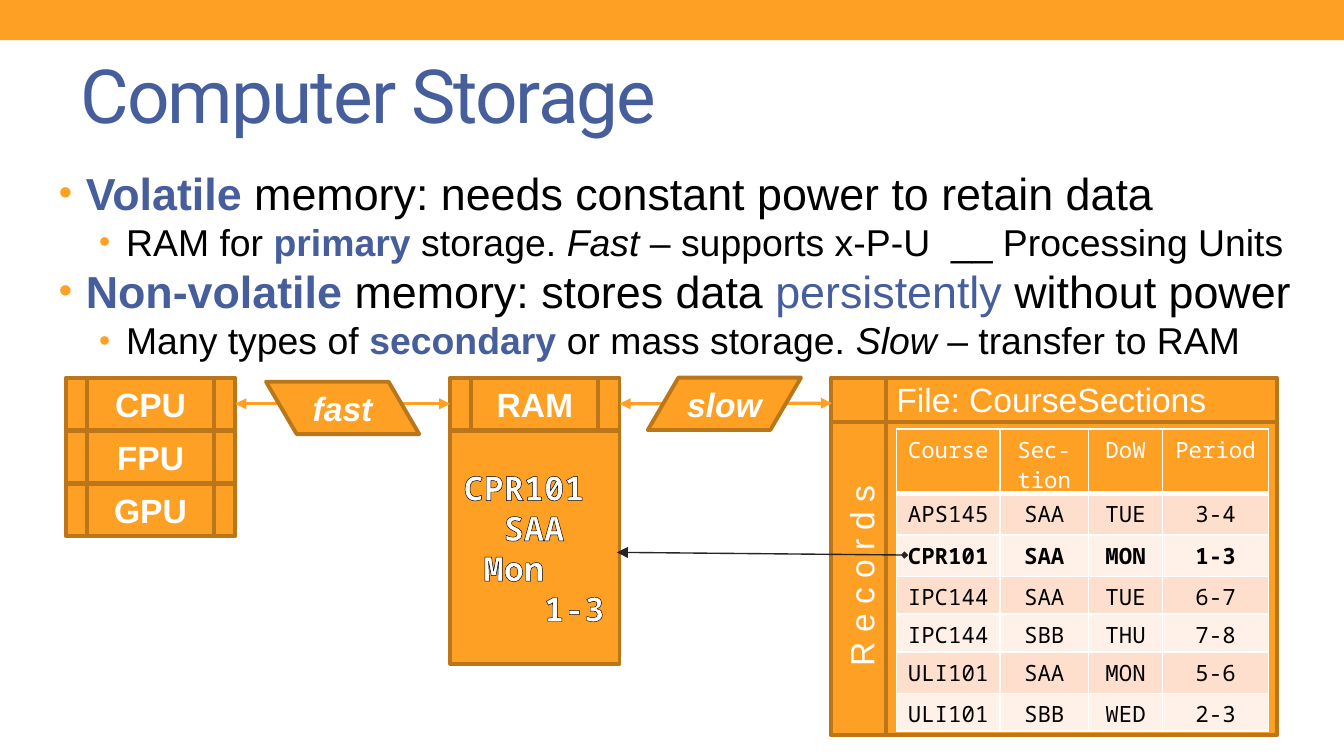
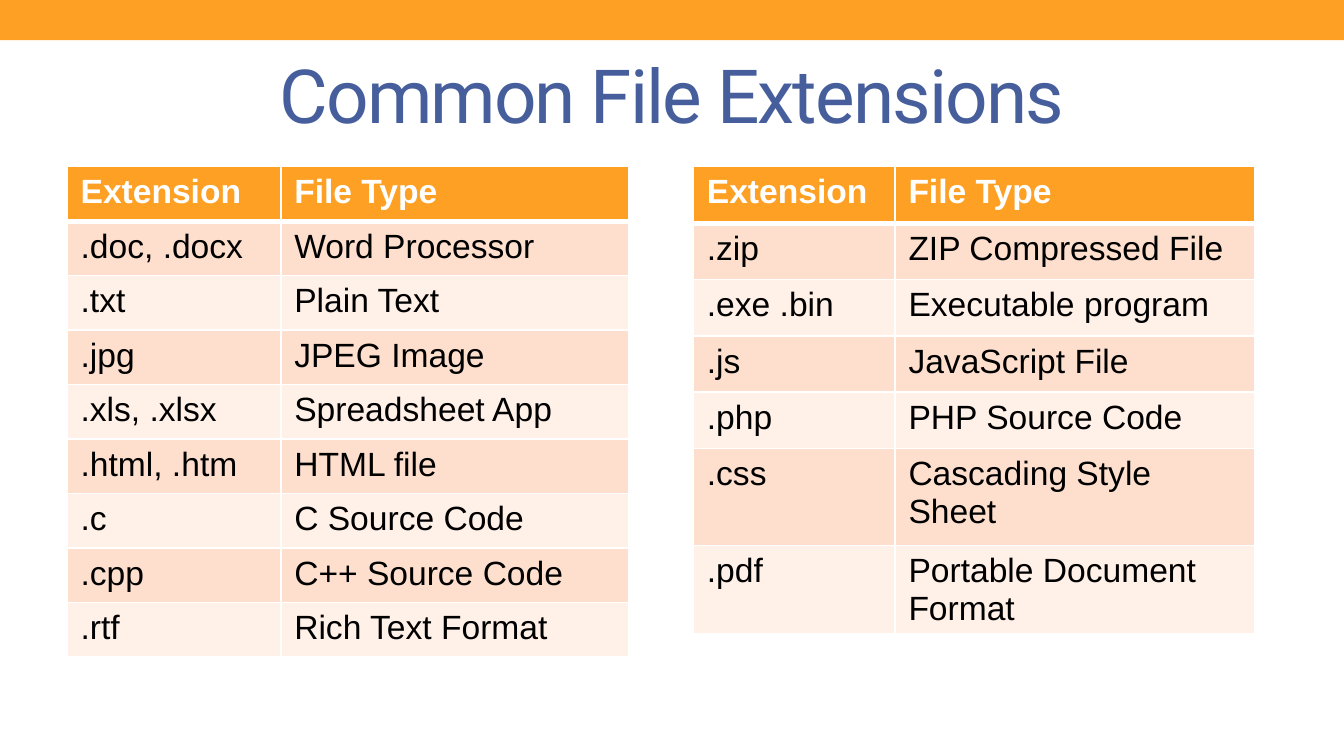
from lxml import etree
from pptx import Presentation
from pptx.dml.color import RGBColor
from pptx.enum.shapes import MSO_CONNECTOR, MSO_SHAPE
from pptx.enum.text import MSO_ANCHOR, MSO_AUTO_SIZE, PP_ALIGN
from pptx.oxml.ns import qn
from pptx.util import Inches, Pt

LEFT, CENTER = PP_ALIGN.LEFT, PP_ALIGN.CENTER
MIDDLE = MSO_ANCHOR.MIDDLE
RECT = MSO_SHAPE.RECTANGLE
UNIT = MSO_SHAPE.FLOWCHART_PREDEFINED_PROCESS
STORE = MSO_SHAPE.FLOWCHART_INTERNAL_STORAGE
SLANT = MSO_SHAPE.FLOWCHART_DATA
STRAIGHT = MSO_CONNECTOR.STRAIGHT

HEX = {
    "orange": "FDA023", "brown": "BB761A", "blue": "465E9C",
    "white": "FFFFFF", "black": "000000", "dark": "262626",
    "peach": "FEDFCD", "cream": "FFF0E8",
}
SANS, MONO, HEAD = "Arial", "Noto Sans Mono", "Roboto"

POINTS = [
    (0, [("Volatile", "key"),
         (" memory: needs constant power to retain data", "")]),
    (1, [("RAM for ", ""), ("primary", "key"), (" storage. ", ""),
         ("Fast", "slant"), (" – supports x-P-U  __ Processing Units", "")]),
    (0, [("Non-volatile", "key"), (" memory: stores data ", ""),
         ("persistently ", "tint"), ("without power", "")]),
    (1, [("Many types of ", ""), ("secondary", "key"),
         (" or mass storage. ", ""), ("Slow", "slant"),
         (" – transfer to RAM", "")]),
]
COURSES = [
    ("Course", "Sec-tion", "DoW", "Period"),
    ("APS145", "SAA", "TUE", "3-4"),
    ("CPR101", "SAA", "MON", "1-3"),
    ("IPC144", "SAA", "TUE", "6-7"),
    ("IPC144", "SBB", "THU", "7-8"),
    ("ULI101", "SAA", "MON", "5-6"),
    ("ULI101", "SBB", "WED", "2-3"),
]
TYPES = ("Extension", "File Type")
DOCS = [
    TYPES,
    (".doc, .docx", "Word Processor"),
    (".txt", "Plain Text"),
    (".jpg", "JPEG Image"),
    (".xls, .xlsx", "Spreadsheet App"),
    (".html, .htm", "HTML file"),
    (".c", "C Source Code"),
    (".cpp", "C++ Source Code"),
    (".rtf", "Rich Text Format"),
]
CODES = [
    TYPES,
    (".zip", "ZIP Compressed File"),
    (".exe .bin", "Executable program"),
    (".js", "JavaScript File"),
    (".php", "PHP Source Code"),
    (".css", "Cascading Style Sheet"),
    (".pdf", "Portable Document Format"),
]


def rgb(name):
    return RGBColor.from_string(HEX[name])


def paint(host, name):
    node = etree.SubElement(etree.SubElement(host, qn("a:solidFill")),
                            qn("a:srgbClr"))
    node.set("val", HEX[name])


def style(run, size, color, face=SANS, bold=False, slant=False):
    font = run.font
    font.size, font.name = Pt(size), face
    font.bold, font.italic = bold, slant
    font.color.rgb = rgb(color)


def style_all(frame, align, *look, **more):
    for para in frame.paragraphs:
        para.alignment = align
        for run in para.runs:
            style(run, *look, **more)


def inset(frame, side, edge):
    frame.margin_left = frame.margin_right = Inches(side)
    frame.margin_top = frame.margin_bottom = Inches(edge)


def add_block(slide, kind, box, text="", side=0.1, slant=False):
    shape = slide.shapes.add_shape(kind, *map(Inches, box))
    shape.shadow.inherit = False
    shape.fill.solid()
    shape.fill.fore_color.rgb = rgb("orange")
    shape.line.color.rgb = rgb("brown")
    shape.line.width = Pt(2.08)
    if text:
        frame = shape.text_frame
        frame.text = text
        frame.vertical_anchor = MIDDLE
        inset(frame, side, 0.05)
        style_all(frame, CENTER, 18, "white", bold=True, slant=slant)
    return shape


def add_label(slide, box, text, align=LEFT, turn=None):
    frame = slide.shapes.add_textbox(*map(Inches, box)).text_frame
    frame.word_wrap = True
    frame.text = text
    frame.vertical_anchor = MIDDLE
    inset(frame, 0, 0)
    style_all(frame, align, 18, "white")
    if turn:
        frame._txBody.find(qn("a:bodyPr")).set("vert", turn)


def add_arrow(slide, start, end, color, width, head, size="med"):
    link = slide.shapes.add_connector(STRAIGHT, *map(Inches, start + end))
    link.line.color.rgb = rgb(color)
    link.line.width = Pt(width)
    props = link.element.spPr
    line = props.find(qn("a:ln"))
    etree.SubElement(line, qn("a:headEnd"), type=head, w=size, len=size)
    etree.SubElement(line, qn("a:tailEnd"), type="triangle")
    etree.SubElement(props, qn("a:effectLst"))
    return link


def add_points(slide, box):
    frame = slide.shapes.add_textbox(*map(Inches, box)).text_frame
    frame.word_wrap = True
    frame.margin_top = Inches(0.07)
    for i, (level, parts) in enumerate(POINTS):
        para = frame.add_paragraph() if i else frame.paragraphs[0]
        para.level = level
        props = para._p.get_or_add_pPr()
        props.set("marL", str(Inches(0.2 + 0.3 * level)))
        props.set("indent", str(Inches(-0.2)))
        tint = etree.SubElement(props, qn("a:buClr"))
        etree.SubElement(tint, qn("a:srgbClr")).set("val", HEX["orange"])
        etree.SubElement(props, qn("a:buSzPct")).set("val", "85000")
        etree.SubElement(props, qn("a:buFont")).set("typeface", SANS)
        etree.SubElement(props, qn("a:buChar")).set("char", "•")
        for text, look in parts:
            run = para.add_run()
            run.text = text
            color = "blue" if look in ("key", "tint") else "black"
            style(run, 24 - 4 * level, color,
                  bold=look == "key", slant=look == "slant")


def add_edges(cell, row):
    props = cell._tc.get_or_add_tcPr()
    for side in "LRTB":
        thick = (row, side) in ((0, "B"), (1, "T"))
        line = etree.SubElement(props, qn("a:ln" + side))
        line.set("w", str(Pt(3 if thick else 1)))
        paint(line, "white")


def add_grid(slide, box, cols, rows, data, size=18, face=SANS,
             align=LEFT, pad=None, strong=()):
    holder = slide.shapes.add_table(len(rows), len(cols), *map(Inches, box))
    grid = holder.table
    grid.first_row = grid.horz_banding = False
    for col, width in zip(grid.columns, cols):
        col.width = Inches(width)
    for r, (height, texts) in enumerate(zip(rows, data)):
        grid.rows[r].height = Inches(height)
        fill = ("cream", "peach")[r % 2] if r else "orange"
        for c, text in enumerate(texts):
            cell = grid.cell(r, c)
            add_edges(cell, r)
            cell.fill.solid()
            cell.fill.fore_color.rgb = rgb(fill)
            cell.text = text
            if pad:
                inset(cell, pad, pad)
            style_all(cell.text_frame, align, size,
                      "black" if r else "white", face, bold=r in strong)
    holder.width, holder.height = map(Inches, box[2:])


def add_record(shape):
    frame = shape.text_frame
    frame.text = "CPR101\nSAA\nMon\n1-3"
    frame.vertical_anchor = MIDDLE
    style_all(frame, LEFT, 18, "white", MONO, bold=True)
    for para, step in zip(frame.paragraphs, (0, 2, 1, 4)):
        props = para._p.get_or_add_pPr()
        props.set("marL", str(Inches(0.15 * step)))
        props.set("indent", "0")
        line = etree.Element(qn("a:ln"), w=str(Pt(0.75)))
        paint(line, "black")
        para.runs[0].font._element.insert(0, line)


def add_page(prs, title, align):
    slide = prs.slides.add_slide(prs.slide_layouts[5])
    head = slide.shapes.title
    head.left, head.top, head.width, head.height = map(
        Inches, (0.5, 0.29, 9, 0.81))
    frame = head.text_frame
    frame.text = title
    frame.auto_size = MSO_AUTO_SIZE.NONE
    frame.vertical_anchor = MIDDLE
    style_all(frame, align, 40, "blue", HEAD)
    frame.paragraphs[0].runs[0].font._element.set("spc", "-100")
    return slide


def add_band(prs, slide):
    band = add_block(slide, RECT, (0, 0, 10, 0.3))
    band.line.fill.background()
    prs.slide_master.shapes.element.insert(2, band.element)


def fill_storage(slide):
    add_points(slide, (0.34, 1.16, 9.46, 4.31))
    cpu, _, _ = [
        add_block(slide, UNIT, (0.49, 2.81 + 0.395 * i, 1.26, 0.39), name)
        for i, name in enumerate(("CPU", "FPU", "GPU"))]
    add_record(add_block(slide, RECT, (3.35, 3.21, 1.26, 1.73)))
    add_block(slide, STORE, (6.18, 2.81, 3.32, 2.66))
    ram = add_block(slide, UNIT, (3.35, 2.81, 1.26, 0.39), "RAM")

    fast = add_arrow(slide, (1.75, 3), (3.35, 3), "orange", 1.75, "triangle")
    fast.begin_connect(cpu, 3)
    fast.end_connect(ram, 1)
    slow = add_arrow(slide, (4.61, 3), (6.19, 3), "orange", 1.75, "triangle")
    slow.begin_connect(ram, 3)
    add_block(slide, SLANT, (4.82, 2.81, 1.14, 0.39), "slow", 0.04, True)
    flip = add_block(slide, SLANT, (1.98, 2.84, 1.14, 0.39), "fast",
                     0.08, True)
    flip.element.spPr.find(qn("a:xfrm")).set("flipH", "1")

    add_label(slide, (6.67, 2.81, 2.36, 0.32), "File: CourseSections")
    add_label(slide, (6.25, 3.21, 0.31, 2.22), " R e c o r d s",
              CENTER, "vert270")
    add_grid(slide, (6.67, 3.19, 2.76, 2.24), (0.77, 0.66, 0.55, 0.79),
             (0.41, 0.31, 0.31, 0.24, 0.24, 0.31, 0.28), COURSES,
             12, MONO, CENTER, 0.04, strong=(2,))
    add_arrow(slide, (6.73, 4.13), (4.59, 4.11), "dark", 0.75,
              "diamond", "sm")


def main():
    prs = Presentation()
    prs.slide_width, prs.slide_height = Inches(10), Inches(10 * 9 / 16)
    first = add_page(prs, "Computer Storage", LEFT)
    add_band(prs, first)
    fill_storage(first)

    second = add_page(prs, "Common File Extensions", CENTER)
    add_grid(second, (0.5, 1.24, 4.17, 3.65), (1.59, 2.59),
             [3.65 / 9] * 9, DOCS, strong=(0,))
    add_grid(second, (5.16, 1.24, 4.17, 3.51), (1.5, 2.68),
             [0.42] * 5 + [0.72, 0.42], CODES, strong=(0,))
    prs.save("out.pptx")


if __name__ == "__main__":
    main()
